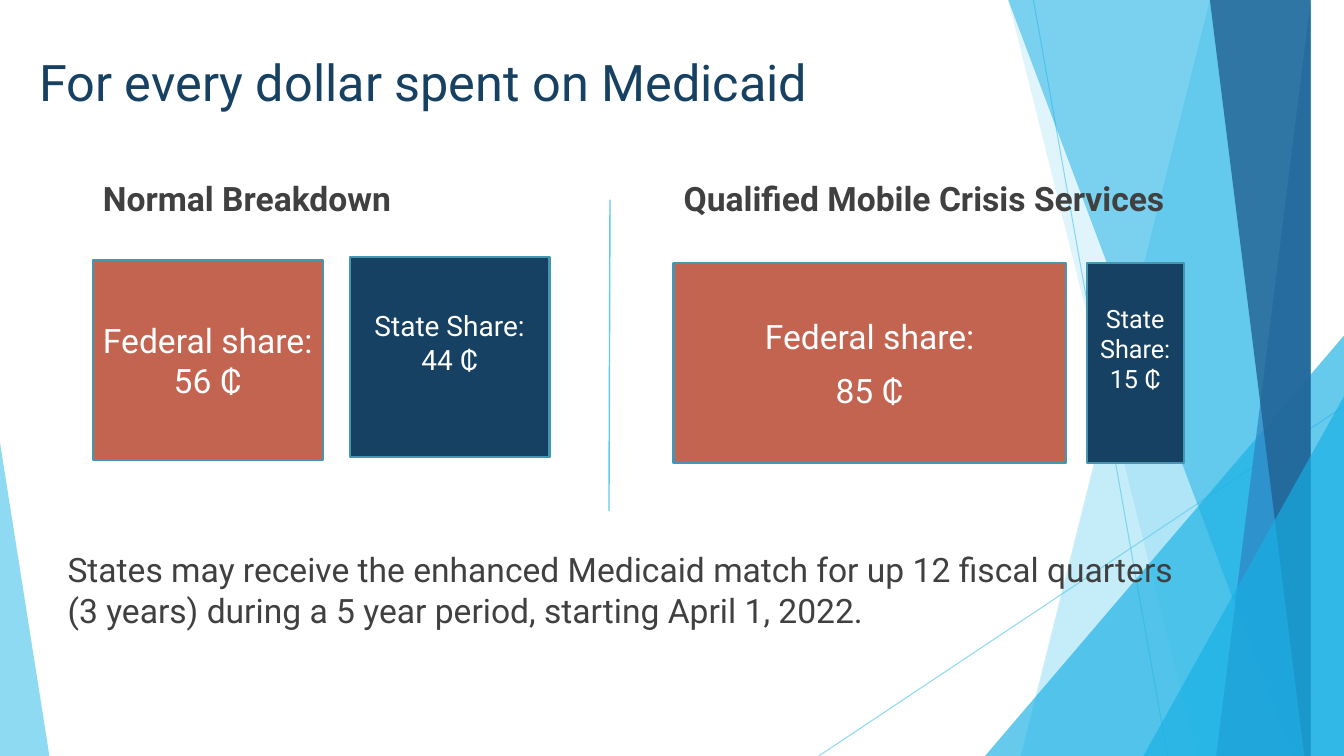
from dataclasses import dataclass

from lxml import etree
from pptx import Presentation
from pptx.dml.color import RGBColor
from pptx.enum import shapes, text
from pptx.oxml import ns
from pptx.util import Inches, Pt


@dataclass(frozen=True)
class Theme:
    font: str = "Roboto"
    navy: str = "174162"
    rust: str = "C36451"
    edge: str = "4696B1"
    sky: str = "5FCBEF"
    cyan: str = "17B0E4"
    blue: str = "2E83C3"
    deep: str = "226292"
    gray: str = "404040"
    white: str = "FFFFFF"
    head: int = 36
    body: int = 24
    mid: int = 20
    small: int = 18


WIDE, HIGH = 13.33, 7.5
LEFT = text.PP_ALIGN.LEFT
MID = text.PP_ALIGN.CENTER
TOP = text.MSO_ANCHOR.TOP
CORE = text.MSO_ANCHOR.MIDDLE
BASE = text.MSO_ANCHOR.BOTTOM


def write(shape, lines, font, size, color, bold=False, align=LEFT,
          anchor=TOP, gap=0, foot=0.05):
    frame = shape.text_frame
    frame.auto_size = text.MSO_AUTO_SIZE.NONE
    frame.word_wrap = True
    frame.vertical_anchor = anchor
    frame.margin_bottom = Inches(foot)
    for i, line in enumerate(lines):
        para = frame.add_paragraph() if i else frame.paragraphs[0]
        props = para._p.get_or_add_pPr()
        props.set("marL", "0")
        props.set("indent", "0")
        etree.SubElement(props, ns.qn("a:buNone"))
        para.alignment = align
        para.space_before = Pt(gap if i else 0)
        run = para.add_run()
        run.text = line
        run.font.name = font
        run.font.size = Pt(size)
        run.font.bold = bold
        run.font.color.rgb = RGBColor.from_string(color)


class Deck:
    def __init__(self, theme):
        self.theme = theme
        self.show = Presentation()
        self.show.slide_width = Inches(WIDE)
        self.show.slide_height = Inches(HIGH)
        self.slide = self.show.slides.add_slide(self.show.slide_layouts[4])
        self.items = self.slide.shapes

    def paint(self, fill, color, alpha=100):
        fill.solid()
        fill.fore_color.rgb = RGBColor.from_string(color)
        if alpha < 100:
            tint = fill._xPr.find(".//" + ns.qn("a:srgbClr"))
            etree.SubElement(tint, ns.qn("a:alpha"), val=str(alpha * 1000))

    def line(self, start, end, width, alpha=100):
        ends = [Inches(n) for n in (*start, *end)]
        line = self.items.add_connector(shapes.MSO_CONNECTOR.STRAIGHT, *ends)
        line.line.width = Pt(width)
        self.paint(line.line.fill, self.theme.sky, alpha)
        etree.SubElement(line._element.spPr, ns.qn("a:effectLst"))

    def glass(self, shape, color, alpha):
        shape.shadow.inherit = False
        shape.line.fill.background()
        self.paint(shape.fill, color, alpha)

    def band(self, top, base, color, alpha):
        pen = self.items.build_freeform(top, 0, scale=Inches(1))
        pen.add_line_segments([(WIDE, 0), (WIDE, HIGH), (base, HIGH)])
        self.glass(pen.convert_to_shape(), color, alpha)

    def peak(self, left, top, right, tip, color, alpha):
        box = [Inches(n) for n in (left, top, right - left, HIGH - top)]
        shape = self.items.add_shape(
            shapes.MSO_SHAPE.ISOSCELES_TRIANGLE, *box)
        shape.adjustments[0] = tip
        self.glass(shape, color, alpha)

    def place(self, index, box):
        shape = self.slide.placeholders[index]
        shape.left, shape.top, shape.width, shape.height = map(Inches, box)
        shape.element.getparent().append(shape.element)
        return shape

    def words(self, index, box, line, size, color, **style):
        write(self.place(index, box), [line], self.theme.font, size, color,
              **style)

    def share(self, box, lines, size, color, index=None, **style):
        if index is None:
            shape = self.items.add_shape(
                shapes.MSO_SHAPE.RECTANGLE, *map(Inches, box))
            shape.shadow.inherit = False
        else:
            shape = self.place(index, box)
        self.paint(shape.fill, color)
        self.paint(shape.line.fill, self.theme.edge)
        shape.line.width = Pt(1.5)
        write(shape, lines, self.theme.font, size, self.theme.white,
              align=MID, anchor=CORE, **style)


def main():
    look = Theme()
    deck = Deck(look)

    deck.line((10.25, 0), (11.58, HIGH), 0.75, 70)
    deck.line((WIDE, 4.03), (8.12, HIGH), 0.75, 70)
    deck.band(12.28, 10.04, look.sky, 36)
    deck.band(10.5, 11.83, look.sky, 20)
    deck.peak(9.77, 3.33, WIDE, 1, look.cyan, 66)
    deck.band(10.21, 12.91, look.cyan, 50)
    deck.band(13.03, 11.92, look.blue, 70)
    deck.band(11.96, 13.18, look.deep, 80)
    deck.peak(11.34, 3.93, WIDE, 1, look.cyan, 66)
    deck.peak(0, 4.39, 0.49, 0, look.sky, 70)

    deck.words(0, (0.29, 0.46, 11.5, 0.79),
               "For every dollar spent on Medicaid", look.head, look.navy)
    heads = [(1, 0.92, "Normal Breakdown"),
             (3, 6.68, "Qualified Mobile Crisis Services")]
    for index, left, line in heads:
        deck.words(index, (left, 1.32, 5.65, 0.9), line, look.body,
                   look.gray, bold=True, anchor=BASE)

    deck.share((0.92, 2.58, 2.28, 1.98), ["Federal share:", "56 ₵"],
               look.body, look.rust)
    deck.share((3.47, 2.55, 1.98, 1.98), ["State Share:", "44 ₵"],
               look.mid, look.navy, foot=0.34)
    deck.share((6.68, 2.61, 3.89, 1.98), ["Federal share:", "85 ₵"],
               look.body, look.rust, index=2, gap=10)
    deck.share((10.78, 2.61, 0.96, 1.98), ["State Share:", "15 ₵"],
               look.small, look.navy, foot=0.34)

    deck.line((6.05, 1.98), (6.04, 5.07), 1)
    deck.words(4, (0.57, 5.4, 11.26, 1.07),
               "States may receive the enhanced Medicaid match for up 12 "
               "fiscal quarters (3 years) during a 5 year period, starting "
               "April 1, 2022.", look.body, look.gray)
    deck.show.save("out.pptx")


if __name__ == "__main__":
    main()
